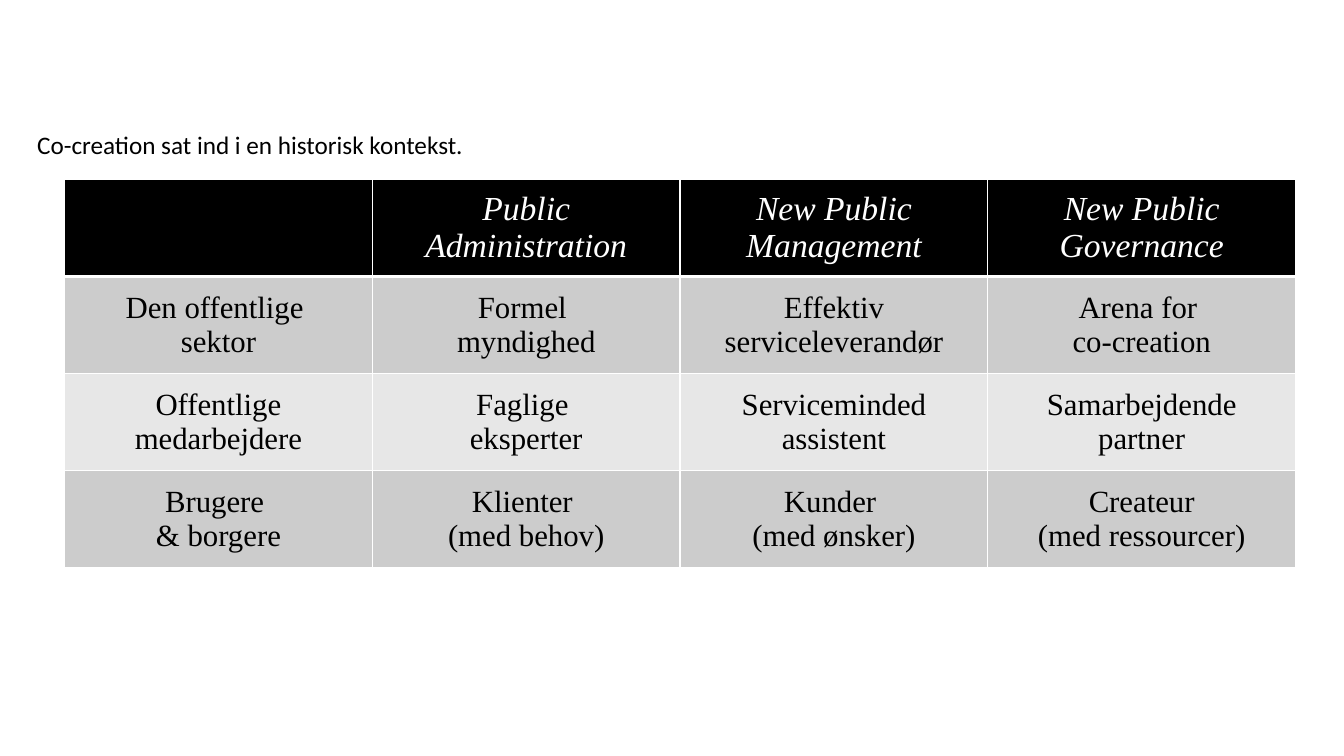
from pptx import Presentation
from pptx.dml.color import RGBColor
from pptx.enum.text import MSO_ANCHOR, PP_ALIGN
from pptx.oxml import parse_xml
from pptx.oxml.ns import nsdecls
from pptx.util import Inches, Pt

COLORS = {
    "header": "000000",
    "odd_row": "CCCCCC",
    "even_row": "E7E7E7",
    "dark_text": "000000",
    "light_text": "FFFFFF",
    "border": "FFFFFF",
}
SLIDE_WIDTH, SLIDE_HEIGHT = 13.33, 7.5
TABLE_LEFT, TABLE_TOP, TABLE_WIDTH, TABLE_HEIGHT = 0.64, 1.78, 12.21, 3.85

CAPTION = "Co-creation sat ind i en historisk kontekst."
PARADIGMS = [
    ["", "Public Administration", "New Public Management", "New Public Governance"],
    ["Den offentlige \nsektor", "Formel \nmyndighed",
     "Effektiv\nserviceleverandør", "Arena for \nco-creation"],
    ["Offentlige medarbejdere", "Faglige \neksperter",
     "Serviceminded\nassistent", "Samarbejdende\npartner"],
    ["Brugere \n& borgere", "Klienter \n(med behov)",
     "Kunder \n(med ønsker)", "Createur\n(med ressourcer)"],
]


def write_text(text_frame, text, font="Times New Roman", size=22,
               color="dark_text", italic=False, align=PP_ALIGN.CENTER):
    text_frame.word_wrap = True
    text_frame.text = text
    for paragraph in text_frame.paragraphs:
        paragraph.alignment = align
        paragraph.font.size = Pt(size)
        for run in paragraph.runs:
            run.font.name = font
            run.font.size = Pt(size)
            run.font.bold = False
            run.font.italic = italic
            run.font.color.rgb = RGBColor.from_string(COLORS[color])


def set_borders(cell, **widths):
    properties = cell._tc.get_or_add_tcPr()
    for position, side in enumerate(("L", "R", "T", "B")):
        width = Pt(widths.get(side, 1))
        properties.insert(position, parse_xml(
            f'<a:ln{side} {nsdecls("a")} w="{width}"><a:solidFill>'
            f'<a:srgbClr val="{COLORS["border"]}"/></a:solidFill></a:ln{side}>'))


def format_cell(cell, fill):
    cell.fill.solid()
    cell.fill.fore_color.rgb = RGBColor.from_string(COLORS[fill])
    cell.vertical_anchor = MSO_ANCHOR.MIDDLE
    cell.margin_left = cell.margin_right = Inches(0.13)
    cell.margin_top = cell.margin_bottom = Inches(0.07)


def add_caption(slide):
    caption = slide.shapes.add_textbox(
        Inches(0.27), Inches(1.23), Inches(4.97), Inches(0.4))
    write_text(caption.text_frame, CAPTION, font="Calibri", size=18,
               align=PP_ALIGN.LEFT)


def add_paradigm_table(slide):
    row_count, column_count = len(PARADIGMS), len(PARADIGMS[0])
    table = slide.shapes.add_table(
        row_count, column_count, Inches(TABLE_LEFT), Inches(TABLE_TOP),
        Inches(TABLE_WIDTH), Inches(TABLE_HEIGHT)).table
    for row_index, texts in enumerate(PARADIGMS):
        for column_index, text in enumerate(texts):
            cell = table.cell(row_index, column_index)
            if row_index == 0:
                format_cell(cell, "header")
                set_borders(cell, B=3)
                write_text(cell.text_frame, text, size=24,
                           color="light_text", italic=True)
            else:
                format_cell(cell, "odd_row" if row_index % 2 else "even_row")
                set_borders(cell, T=3 if row_index == 1 else 1)
                write_text(cell.text_frame, text)


def main():
    presentation = Presentation()
    presentation.slide_width = Inches(SLIDE_WIDTH)
    presentation.slide_height = Inches(SLIDE_HEIGHT)
    slide = presentation.slides.add_slide(presentation.slide_layouts[6])
    add_paradigm_table(slide)
    add_caption(slide)
    presentation.save("out.pptx")


if __name__ == "__main__":
    main()
